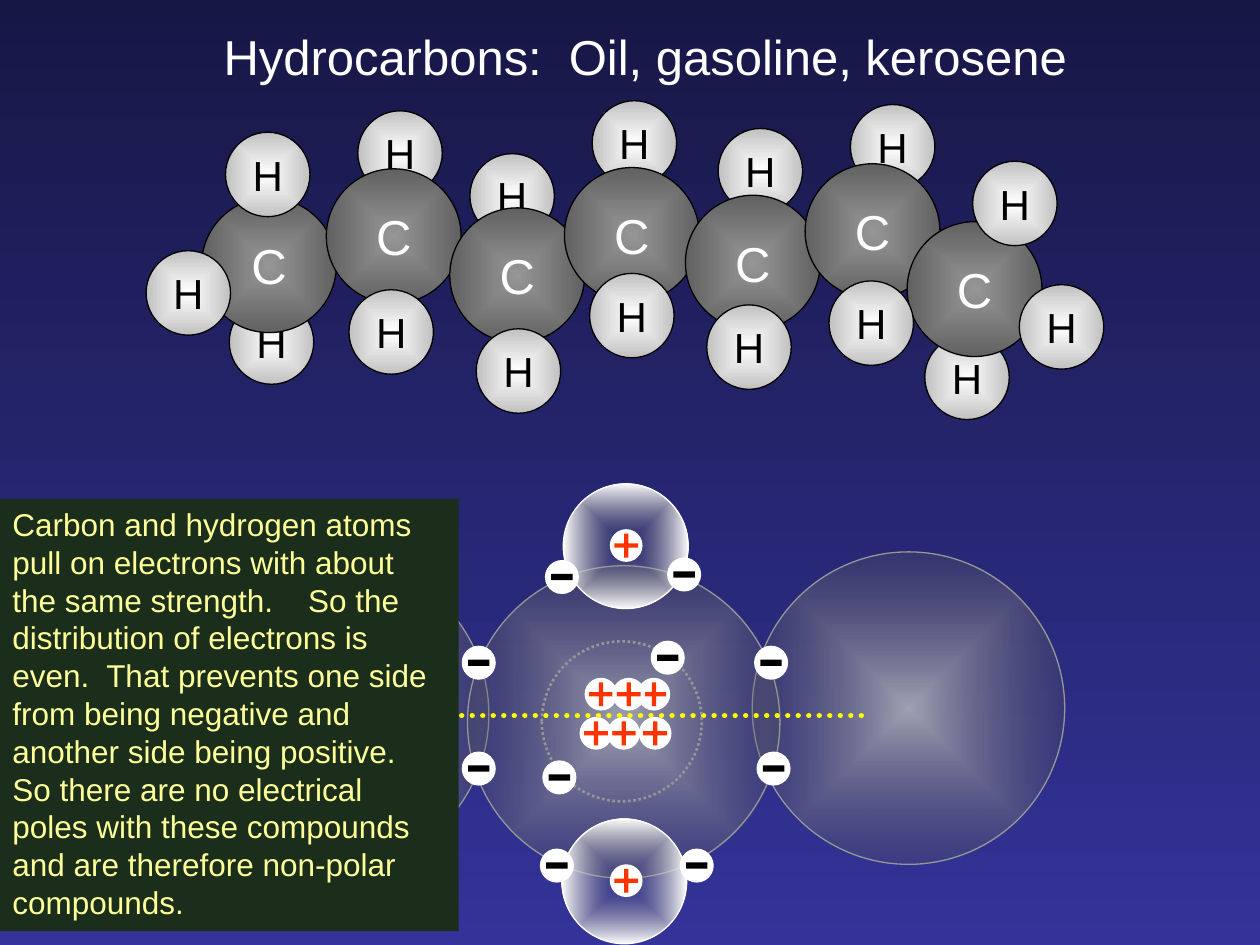
from dataclasses import dataclass
from typing import NamedTuple, Optional

from lxml import etree
from pptx import Presentation
from pptx import util as u
from pptx.dml.color import RGBColor
from pptx.enum import dml, shapes, text
from pptx.oxml import parse_xml
from pptx.oxml.ns import nsdecls, qn


class Stop(NamedTuple):
    """One end of a gradient; shade and alpha are percentages."""
    color: str
    shade: float = 100
    alpha: float = 100


Gradient = tuple[Stop, Stop]


@dataclass(frozen=True)
class Theme:
    font: str = "Arial"
    title_size: int = 28
    body_size: int = 18
    white: str = "FFFFFF"
    black: str = "000000"
    outline: str = "969696"
    positive: str = "FF3300"
    axis: str = "FFFF00"
    panel: str = "1A2E1B"
    panel_text: str = "FFFF99"
    backdrop: Gradient = (Stop("333399", 46.28), Stop("333399"))
    shell: Gradient = (Stop("C0C0C0", 100, 79), Stop("C0C0C0", 47.5, 25))
    small_shell: Gradient = (Stop("666666", 100, 0), Stop("FFFFFF"))


class Element(NamedTuple):
    diameter: float
    size: int
    color: str
    fill: Gradient


class Spot(NamedTuple):
    """A symbol with the left and top of its circle."""
    symbol: str
    left: float
    top: float


THEME = Theme()
THIN = 0.75
CHARGE = 0.26
ELEMENTS = {
    "H": Element(0.67, 24, THEME.black, (Stop("FFFFFF"), Stop("FFFFFF", 76))),
    "C": Element(1.07, 28, THEME.white, (Stop("969696"), Stop("969696", 65))),
}

# Atoms from back to front
ATOMS = [
    Spot("H", 2.84, 0.88), Spot("H", 3.73, 1.22), Spot("H", 4.7, 0.8),
    Spot("H", 6.75, 0.83), Spot("H", 5.7, 1.02), Spot("H", 1.82, 2.38),
    Spot("C", 1.6, 1.57), Spot("H", 7.34, 2.66), Spot("H", 1.16, 1.99),
    Spot("H", 1.79, 1.05), Spot("C", 2.59, 1.34), Spot("C", 3.57, 1.65),
    Spot("C", 4.48, 1.33), Spot("C", 5.44, 1.55), Spot("C", 6.39, 1.3),
    Spot("C", 7.2, 1.76), Spot("H", 2.77, 2.3), Spot("H", 3.78, 2.61),
    Spot("H", 4.68, 2.17), Spot("H", 5.61, 2.42), Spot("H", 6.58, 2.23),
    Spot("H", 7.72, 1.28), Spot("H", 8.09, 2.26),
]
SHELLS = [(1.4, 4.43), (5.97, 4.38), (3.71, 4.49)]
SMALL_SHELLS = [(4.46, 6.5), (4.47, 3.84)]
BACK_CHARGES = [
    Spot("+", 4.84, 4.2), Spot("+", 4.84, 6.86), Spot("+", 4.64, 5.38),
    Spot("+", 5.06, 5.38), Spot("+", 4.82, 5.69), Spot("+", 4.6, 5.69),
    Spot("-", 6.01, 5.97), Spot("-", 4.29, 6.74), Spot("-", 3.67, 5.13),
    Spot("-", 5.4, 6.74), Spot("-", 4.33, 4.45), Spot("-", 5.3, 4.43),
]
FRONT_CHARGES = [
    Spot("+", 4.86, 5.38), Spot("+", 5.07, 5.69), Spot("-", 5.99, 5.13),
    Spot("-", 3.67, 5.97), Spot("-", 4.31, 6.04), Spot("-", 5.17, 5.09),
]
EXPLANATION = (
    "Carbon and hydrogen atoms pull on electrons with about the same strength.    "
    "So the distribution of electrons is even.  That prevents one side from being "
    "negative and another side being positive.  So there are no electrical poles "
    "with these compounds and are therefore non-polar compounds."
)


def set_gradient(fill, owner, stops: Gradient, direction: str) -> None:
    """Give a fill two stops and the direction element that follows them."""
    fill.gradient()
    gradient = owner.find(".//" + qn("a:gradFill"))
    for child in list(gradient):
        gradient.remove(child)
    marks = ""
    for position, stop in zip((0, 100000), stops):
        shade = f'<a:gamma/><a:shade val="{stop.shade * 1000:.0f}"/><a:invGamma/>'
        alpha = f'<a:alpha val="{stop.alpha * 1000:.0f}"/>'
        marks += (f'<a:gs pos="{position}"><a:srgbClr val="{stop.color}">'
                  f'{shade if stop.shade < 100 else ""}'
                  f'{alpha if stop.alpha < 100 else ""}</a:srgbClr></a:gs>')
    holder = parse_xml(f'<a:gradFill {nsdecls("a")}><a:gsLst>{marks}</a:gsLst>'
                       f'{direction}</a:gradFill>')
    gradient.extend(list(holder))


def set_line(line, color: str, width: float, dotted: bool = False) -> None:
    line.color.rgb = RGBColor.from_string(color)
    line.width = u.Pt(width)
    if dotted:
        line.dash_style = dml.MSO_LINE.ROUND_DOT


def add_figure(parent, kind, left: float, top: float, width: float, height: float,
               *, fill: str | Gradient | None = None, line: Optional[str] = None,
               line_width: float = THIN, dotted: bool = False):
    """Add a preset shape with a plain, gradient or empty fill."""
    shape = parent.add_shape(kind, *map(u.Inches, (left, top, width, height)))
    shape.shadow.inherit = False
    if fill is None:
        shape.fill.background()
    elif isinstance(fill, str):
        shape.fill.solid()
        shape.fill.fore_color.rgb = RGBColor.from_string(fill)
    else:
        set_gradient(shape.fill, shape.element, fill,
                     '<a:path path="shape"><a:fillToRect l="50000" t="50000" '
                     'r="50000" b="50000"/></a:path>')
    if line:
        set_line(shape.line, line, line_width, dotted)
    else:
        shape.line.fill.background()
    return shape


def add_circle(parent, left: float, top: float, diameter: float, **style):
    return add_figure(parent, shapes.MSO_SHAPE.OVAL, left, top, diameter, diameter, **style)


def write(shape, words: str, *, size: int, color: str, align=text.PP_ALIGN.LEFT,
          anchor=text.MSO_ANCHOR.TOP, wrap: bool = True) -> None:
    frame = shape.text_frame
    frame.word_wrap = wrap
    frame.vertical_anchor = anchor
    para = frame.paragraphs[0]
    para.alignment = align
    span = para.add_run()
    span.text = words
    span.font.name = THEME.font
    span.font.size = u.Pt(size)
    span.font.color.rgb = RGBColor.from_string(color)


def add_atom(parent, spot: Spot) -> None:
    element = ELEMENTS[spot.symbol]
    ball = add_circle(parent, spot.left, spot.top, element.diameter,
                      fill=element.fill, line=THEME.black)
    write(ball, spot.symbol, size=element.size, color=element.color,
          align=text.PP_ALIGN.CENTER, anchor=text.MSO_ANCHOR.MIDDLE, wrap=False)


def add_charge(page, spot: Spot) -> None:
    """Draw a white disc with a plus or a minus sign as one group."""
    group = page.shapes.add_group_shape().shapes
    positive = spot.symbol == "+"
    add_circle(group, spot.left, spot.top, CHARGE, fill=THEME.white,
               line=None if positive else THEME.white)
    width, height = (0.19, 0.19) if positive else (0.17, 0.05)
    kind = shapes.MSO_SHAPE.CROSS if positive else shapes.MSO_SHAPE.RECTANGLE
    sign = add_figure(group, kind, spot.left + (CHARGE - width) / 2,
                      spot.top + (CHARGE - height) / 2, width, height,
                      fill=THEME.positive if positive else THEME.black)
    if positive:
        sign.adjustments[0] = 0.41


def add_axis(page) -> None:
    axis = page.shapes.add_connector(shapes.MSO_CONNECTOR.STRAIGHT,
                                     *map(u.Inches, (3.08, 5.68, 6.85, 5.68)))
    set_line(axis.line, THEME.axis, 3, dotted=True)
    properties = axis.element.spPr
    properties.find(qn("a:ln")).set("cap", "rnd")
    etree.SubElement(properties, qn("a:effectLst"))


def main() -> None:
    deck = Presentation()
    deck.slide_width, deck.slide_height = u.Inches(10), u.Inches(7.5)
    page = deck.slides.add_slide(deck.slide_layouts[5])
    set_gradient(page.background.fill, page.element, THEME.backdrop,
                 '<a:lin ang="5400000" scaled="1"/>')

    # Title
    title = page.shapes.title
    title.left, title.top, title.width, title.height = map(u.Inches, (0.73, 0.16, 8.78, 0.57))
    write(title, "Hydrocarbons:  Oil, gasoline, kerosene", size=THEME.title_size,
          color=THEME.white, align=text.PP_ALIGN.CENTER)

    # Hydrocarbon chain
    molecule = page.shapes.add_group_shape().shapes
    for spot in ATOMS:
        add_atom(molecule, spot)

    # Electron shells and charges
    for left, top in SHELLS:
        add_circle(page.shapes, left, top, 2.48, fill=THEME.shell, line=THEME.outline)
    for left, top in SMALL_SHELLS:
        add_circle(page.shapes, left, top, 0.99, fill=THEME.small_shell, line=THEME.white)
    for spot in BACK_CHARGES:
        add_charge(page, spot)
    add_axis(page)
    add_circle(page.shapes, 4.3, 5.09, 1.27, line=THEME.outline, line_width=1.5, dotted=True)
    for spot in FRONT_CHARGES:
        add_charge(page, spot)

    # Explanation panel
    box = add_figure(page.shapes, shapes.MSO_SHAPE.RECTANGLE, 0, 3.96, 3.64, 3.43,
                     fill=THEME.panel)
    write(box, EXPLANATION, size=THEME.body_size, color=THEME.panel_text)
    deck.save("out.pptx")


if __name__ == "__main__":
    main()
